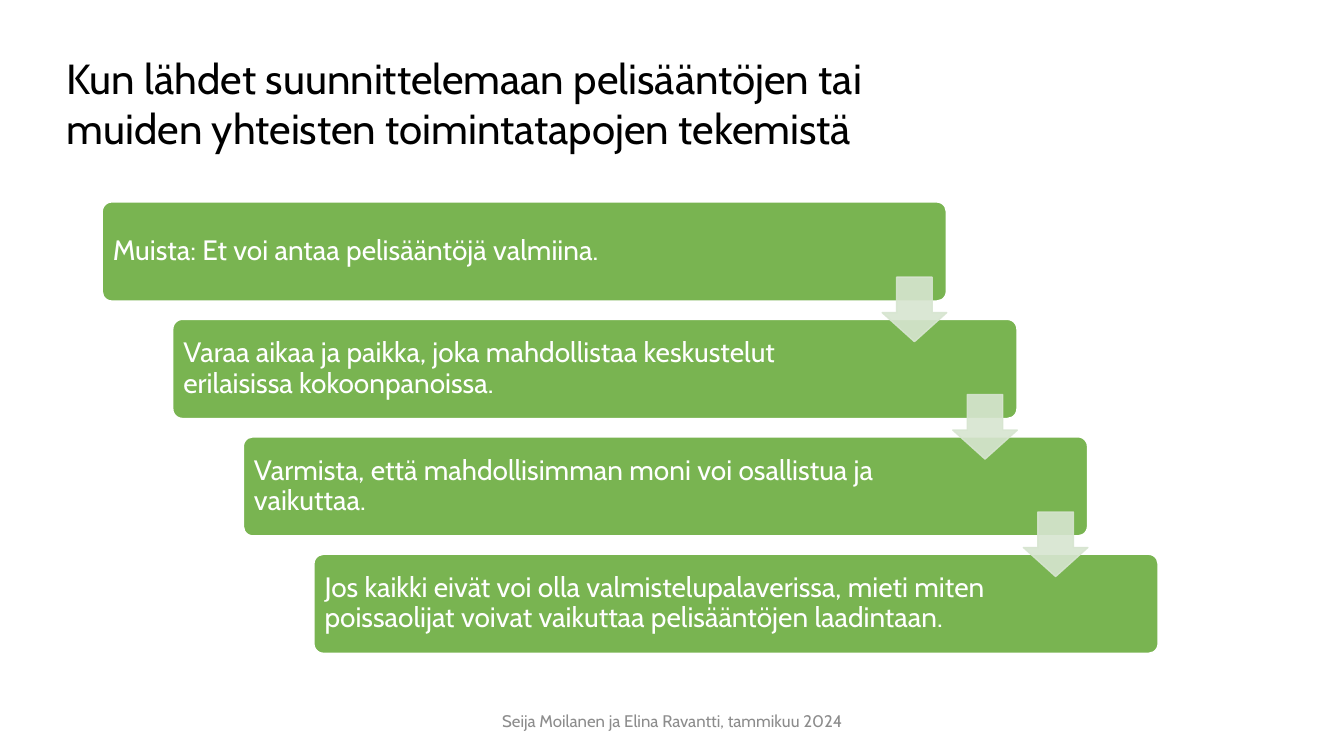
from lxml import etree
from pptx import Presentation
from pptx.dml.color import RGBColor
from pptx.enum.shapes import MSO_SHAPE
from pptx.enum.text import MSO_ANCHOR, PP_ALIGN
from pptx.oxml.ns import qn
from pptx.util import Inches, Pt

ROUNDED, DOWN_ARROW = MSO_SHAPE.ROUNDED_RECTANGLE, MSO_SHAPE.DOWN_ARROW
TOP, MIDDLE = MSO_ANCHOR.TOP, MSO_ANCHOR.MIDDLE
LEFT, CENTER = PP_ALIGN.LEFT, PP_ALIGN.CENTER

FONT = "Cabin"
BLACK = RGBColor(0x00, 0x00, 0x00)
WHITE = RGBColor(0xFF, 0xFF, 0xFF)
GREEN = RGBColor(0x79, 0xB4, 0x51)
PALE_GREEN = RGBColor(0xD7, 0xE5, 0xD0)
GREY = RGBColor(0x8C, 0x8C, 0x8C)

# The staircase: each step moves one column right and one row down.
STAIR_LEFT, STAIR_TOP = 1.01, 2.0
COLUMN, ROW = 0.7, 1.165
STEP_WIDTH, STEP_HEIGHT = 8.38, 0.99
ARROW_SIZE, ARROW_DROP = 0.64, 0.75

TITLE = "Kun lähdet suunnittelemaan pelisääntöjen tai\nmuiden yhteisten toimintatapojen tekemistä"
STEPS = [
    "Muista: Et voi antaa pelisääntöjä valmiina.",
    "Varaa aikaa ja paikka, joka mahdollistaa keskustelut erilaisissa kokoonpanoissa.",
    "Varmista, että mahdollisimman moni voi osallistua ja vaikuttaa.",
    "Jos kaikki eivät voi olla valmistelupalaverissa, mieti miten poissaolijat "
    "voivat vaikuttaa pelisääntöjen laadintaan.",
]
FOOTER = "Seija Moilanen ja Elina Ravantti, tammikuu 2024"


def write_text(shape, text, *, size, color, align=LEFT, anchor=MIDDLE,
               insets=(0.1, 0.05, 0.1, 0.05), line_spacing=None):
    """Fill a shape with one paragraph; insets are left, top, right, bottom."""
    frame = shape.text_frame
    frame.word_wrap = True
    frame.vertical_anchor = anchor
    (frame.margin_left, frame.margin_top,
     frame.margin_right, frame.margin_bottom) = map(Inches, insets)
    paragraph = frame.paragraphs[0]
    paragraph.text = text
    paragraph.alignment = align
    paragraph.line_spacing = line_spacing
    for run in paragraph.runs:
        run.font.name = FONT
        run.font.size = Pt(size)
        run.font.color.rgb = color


def add_text(slide, left, top, width, height, text, **text_format):
    box = slide.shapes.add_textbox(*map(Inches, (left, top, width, height)))
    write_text(box, text, **text_format)


def add_filled_shape(slide, kind, left, top, width, height, *, adjustments,
                     fill, line, line_width):
    shape = slide.shapes.add_shape(kind, *map(Inches, (left, top, width, height)))
    shape.shadow.inherit = False
    for index, value in enumerate(adjustments):
        shape.adjustments[index] = value
    shape.fill.solid()
    shape.fill.fore_color.rgb = fill
    shape.line.color.rgb = line
    shape.line.width = Pt(line_width)
    return shape


def set_opacity(shape, percent):
    """Apply the opacity to both fill and line."""
    for color in shape.fill._xPr.iter(qn("a:srgbClr")):
        etree.SubElement(color, qn("a:alpha")).set("val", str(percent * 1000))


def add_step(slide, index, text):
    step = add_filled_shape(
        slide, ROUNDED, STAIR_LEFT + index * COLUMN, STAIR_TOP + index * ROW,
        STEP_WIDTH, STEP_HEIGHT, adjustments=[0.1],
        fill=GREEN, line=WHITE, line_width=1.5)
    write_text(step, text, size=20, color=WHITE, line_spacing=0.9,
               insets=(0.08, 0.08, 1.45, 0.08))


def add_step_arrow(slide, index):
    """Link a step's right end to the step below it."""
    right = STAIR_LEFT + index * COLUMN + STEP_WIDTH
    arrow = add_filled_shape(
        slide, DOWN_ARROW, right - ARROW_SIZE, STAIR_TOP + index * ROW + ARROW_DROP,
        ARROW_SIZE, ARROW_SIZE, adjustments=[0.45, 0.55],
        fill=PALE_GREEN, line=PALE_GREEN, line_width=1)
    arrow.adjustments[0], arrow.adjustments[1] = 0.55, 0.45
    set_opacity(arrow, 90)


def main():
    presentation = Presentation()
    presentation.slide_width = Inches(13.33)
    presentation.slide_height = Inches(7.5)
    slide = presentation.slides.add_slide(presentation.slide_layouts[6])

    add_text(slide, 0.66, 0.52, 9.65, 1.01, TITLE, size=30, color=BLACK,
             anchor=TOP, insets=(0, 0, 0, 0))
    for index, text in enumerate(STEPS):
        add_step(slide, index, text)
    for index in range(len(STEPS) - 1):
        add_step_arrow(slide, index)
    add_text(slide, 4.42, 6.95, 4.5, 0.4, FOOTER, size=12, color=GREY, align=CENTER)

    presentation.save("out.pptx")


if __name__ == "__main__":
    main()
